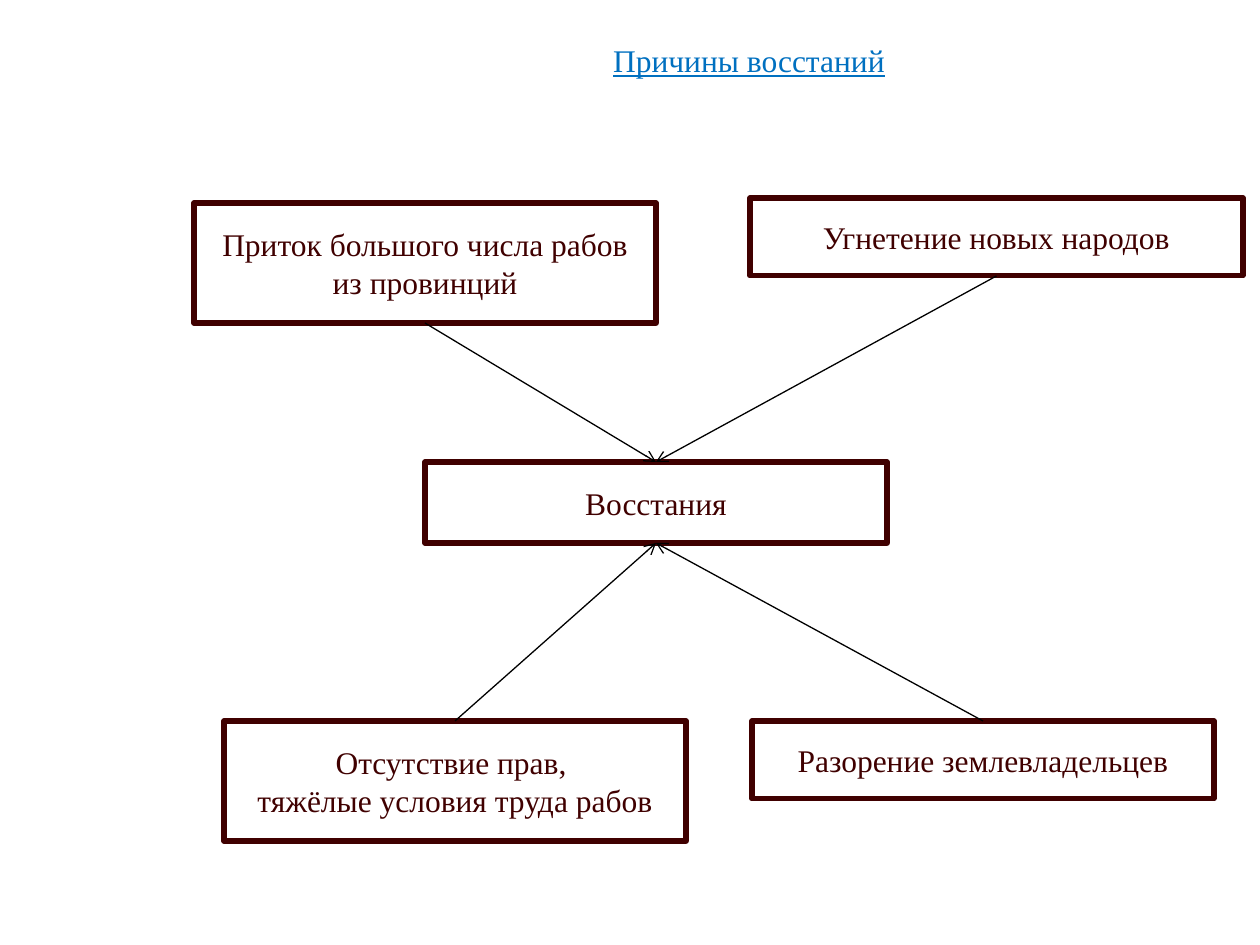
import pptx
import pptx.dml.color
import pptx.enum.shapes
import pptx.enum.text
import pptx.oxml.ns
import pptx.util
from lxml import etree

SCALE = 914400 / 126
DARK, BLUE, WHITE, BLACK = "400000", "0070C0", "FFFFFF", "000000"
TOP, BOTTOM = 0, 2

# name: left, top, width, height, lines of text
BOXES = {
    "nations": (750, 198, 493, 78, ["Угнетение новых народов"]),
    "slaves": (194, 203, 462, 120, ["Приток большого числа рабов из провинций"]),
    "revolts": (425, 462, 462, 81, ["Восстания"]),
    "rights": (224, 721, 462, 120, ["Отсутствие прав, ", "тяжёлые условия труда рабов"]),
    "owners": (752, 721, 462, 78, ["Разорение землевладельцев"]),
}

# cause, side it leaves, side of the revolts box it meets
ARROWS = [
    ("nations", BOTTOM, TOP),
    ("slaves", BOTTOM, TOP),
    ("owners", TOP, BOTTOM),
    ("rights", TOP, BOTTOM),
]


def px(n):
    return pptx.util.Emu(round(n * SCALE))


def color(code):
    return pptx.dml.color.RGBColor.from_string(code)


def add(parent, tag, **attrs):
    return etree.SubElement(parent, pptx.oxml.ns.qn(tag), attrs)


def style(item, values):
    for key, value in values.items():
        setattr(item, key, value)


def write(shape, lines, ink, under=None):
    frame = shape.text_frame
    style(frame, {
        "word_wrap": True,
        "auto_size": pptx.enum.text.MSO_AUTO_SIZE.SHAPE_TO_FIT_TEXT,
        "vertical_anchor": pptx.enum.text.MSO_ANCHOR.MIDDLE,
        "margin_left": px(25), "margin_right": px(25),
        "margin_top": px(21), "margin_bottom": px(21),
    })
    for i, line in enumerate(lines):
        para = frame.add_paragraph() if i else frame.paragraphs[0]
        para.alignment = pptx.enum.text.PP_ALIGN.CENTER
        run = para.add_run()
        run.text = line
        style(run.font, {"name": "Times New Roman",
                         "size": pptx.util.Pt(18), "underline": under})
        run.font.color.rgb = color(ink)


def block(slide, left, top, width, height):
    shape = slide.shapes.add_shape(
        pptx.enum.shapes.MSO_SHAPE.RECTANGLE,
        px(left), px(top), px(width), px(height))
    shape.shadow.inherit = False
    shape.fill.solid()
    shape.fill.fore_color.rgb = color(WHITE)
    return shape


def box(slide, left, top, width, height, lines):
    shape = block(slide, left, top, width, height)
    # Fill at 80% opacity
    tint = shape._element.spPr.find(".//" + pptx.oxml.ns.qn("a:srgbClr"))
    add(tint, "a:alpha", val="80000")
    # Thick border with round corners
    shape.line.color.rgb = color(DARK)
    shape.line.width = pptx.util.Pt(3)
    add(shape.line._get_or_add_ln(), "a:round")
    write(shape, lines, DARK)
    return shape


def title(slide, left, top, width, height, text):
    shape = block(slide, left, top, width, height)
    shape.line.fill.background()
    write(shape, [text], BLUE, True)


def arrow(slide, start, out, end, into):
    line = slide.shapes.add_connector(
        pptx.enum.shapes.MSO_CONNECTOR.STRAIGHT, 0, 0, 0, 0)
    line.begin_connect(start, out)
    line.end_connect(end, into)
    line.line.color.rgb = color(BLACK)
    line.line.width = pptx.util.Pt(0.75)
    add(line.line._get_or_add_ln(), "a:tailEnd", type="arrow")
    add(line._element.spPr, "a:effectLst")


def main():
    deck = pptx.Presentation()
    deck.slide_width, deck.slide_height = px(1260), px(945)
    slide = deck.slides.add_slide(deck.slide_layouts[6])

    # Causes around the revolts
    shapes = {name: box(slide, *data) for name, data in BOXES.items()}

    # Arrows from each cause to the centre
    for cause, out, into in ARROWS:
        arrow(slide, shapes[cause], out, shapes["revolts"], into)

    # Heading
    title(slide, 392, 17, 714, 86, "Причины восстаний")
    deck.save("out.pptx")


if __name__ == "__main__":
    main()
